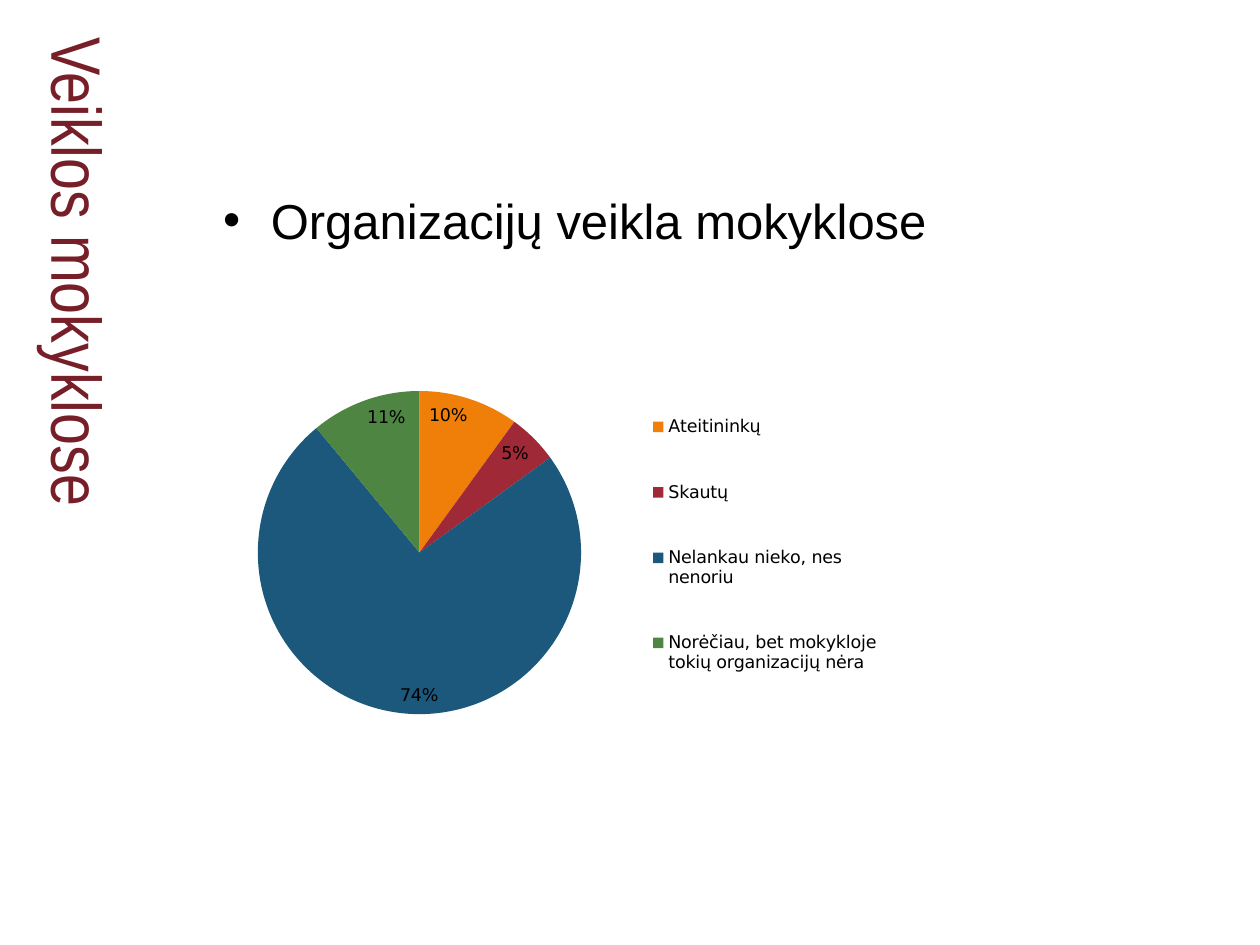
"""Build a slide with a vertical title, one bullet and a pie chart of school activities."""
from dataclasses import dataclass

from lxml.etree import SubElement
from pptx import Presentation
from pptx.chart.data import CategoryChartData
from pptx.dml.color import RGBColor
from pptx.enum.chart import XL_CHART_TYPE as ChartType
from pptx.enum.chart import XL_LABEL_POSITION as LabelPosition
from pptx.enum.chart import XL_LEGEND_POSITION as LegendPosition
from pptx.enum.text import MSO_ANCHOR as Anchor
from pptx.enum.text import MSO_AUTO_SIZE as AutoSize
from pptx.enum.text import PP_ALIGN as Align
from pptx.oxml import parse_xml
from pptx.oxml.ns import nsdecls, qn
from pptx.util import Inches, Pt


@dataclass(frozen=True)
class Theme:
    """Colours, fonts and type sizes of the slide."""
    title_color: str = "771F28"
    text_color: str = "000000"
    slice_colors: tuple = ("F07F09", "9F2936", "1B587C", "4E8542")
    title_font: str = "Arial Narrow"
    body_font: str = "Arial"
    chart_font: str = "DejaVu Sans"
    title_size: int = 40
    body_size: int = 28
    chart_size: int = 10


THEME = Theme()
WIDTH, HEIGHT = Inches(10), Inches(7.5)
ACTIVITIES = {
    "Ateitininkų": 10,
    "Skautų": 5,
    "Nelankau nieko, nes nenoriu": 74,
    "Norėčiau, bet mokykloje tokių organizacijų nėra": 11,
}


def share_box(left, top, width, height):
    """Turn shares of the slide, in percent, into lengths."""
    return (int(WIDTH * left / 100), int(HEIGHT * top / 100),
            int(WIDTH * width / 100), int(HEIGHT * height / 100))


def style_font(font, name, size, color):
    """Set family, size and colour of a font."""
    font.name = name
    font.size = Pt(size)
    font.color.rgb = RGBColor.from_string(color)


def place_text(shape, box, anchor):
    """Move a placeholder to a box and return its first paragraph."""
    shape.left, shape.top, shape.width, shape.height = box
    frame = shape.text_frame
    frame.word_wrap = True
    frame.auto_size = AutoSize.NONE
    frame.vertical_anchor = anchor
    paragraph = frame.paragraphs[0]
    paragraph.alignment = Align.LEFT
    paragraph.space_before = Pt(0)
    return paragraph


def add_title(slide, box, text):
    """Write the title downwards along the left edge."""
    shape = slide.shapes.title
    paragraph = place_text(shape, box, Anchor.MIDDLE)
    shape.text_frame._txBody.bodyPr.set("vert", "eaVert")
    run = paragraph.add_run()
    run.text = text
    style_font(run.font, THEME.title_font, THEME.title_size, THEME.title_color)


def add_bullet(slide, box, text):
    """Write one bulleted line in the body placeholder."""
    paragraph = place_text(slide.placeholders[1], box, Anchor.TOP)
    properties = paragraph._p.get_or_add_pPr()
    properties.set("marL", str(Inches(0.38)))
    properties.set("indent", str(-Inches(0.38)))
    SubElement(properties, qn("a:buFont")).set("typeface", THEME.body_font)
    SubElement(properties, qn("a:buChar")).set("char", "•")
    run = paragraph.add_run()
    run.text = text
    style_font(run.font, THEME.body_font, THEME.body_size, THEME.text_color)


def chart_layout(left, top, width, height, inner=False):
    """Return a manual layout given in shares of the chart."""
    target = '<c:layoutTarget val="inner"/>' if inner else ""
    return parse_xml(
        f'<c:layout {nsdecls("c")}><c:manualLayout>{target}'
        '<c:xMode val="edge"/><c:yMode val="edge"/>'
        f'<c:x val="{left}"/><c:y val="{top}"/>'
        f'<c:w val="{width}"/><c:h val="{height}"/>'
        '</c:manualLayout></c:layout>')


def set_layout(element, layout):
    """Put a layout in a plot area or legend in place of its own."""
    for old in element.findall(qn("c:layout")):
        element.remove(old)
    position = element.find(qn("c:legendPos"))
    element.insert(0 if position is None else 1, layout)


def add_pie(slide, box, activities):
    """Draw the pie with percent labels and a legend at its right."""
    data = CategoryChartData()
    data.categories = list(activities)
    data.add_series("Series 1", list(activities.values()))
    chart = slide.shapes.add_chart(ChartType.PIE, *box, data).chart
    style_font(chart.font, THEME.chart_font, THEME.chart_size, THEME.text_color)
    chart.has_title = False
    chart.has_legend = True
    chart.legend.position = LegendPosition.RIGHT
    chart.legend.include_in_layout = False
    plot = chart.plots[0]
    plot.vary_by_categories = True
    for index, color in enumerate(THEME.slice_colors):
        fill = plot.series[0].points[index].format.fill
        fill.solid()
        fill.fore_color.rgb = RGBColor.from_string(color)
    plot.has_data_labels = True
    labels = plot.data_labels
    labels.show_percentage = True
    labels.show_value = False
    labels.number_format = "0%"
    labels.number_format_is_linked = False
    labels.position = LabelPosition.INSIDE_END
    style_font(labels.font, THEME.chart_font, THEME.chart_size, THEME.text_color)
    plot_area = chart._chartSpace.chart.plotArea
    set_layout(plot_area, chart_layout(0.02, 0.09, 0.44, 0.69, inner=True))
    set_layout(chart.legend._element, chart_layout(0.54, 0.09, 0.34, 0.66))


def main():
    """Build and save the presentation."""
    presentation = Presentation()
    presentation.slide_width, presentation.slide_height = WIDTH, HEIGHT
    slide = presentation.slides.add_slide(presentation.slide_layouts[1])
    add_title(slide, share_box(1.7, 3.3, 9.2, 95.6), "Veiklos mokyklose")
    add_bullet(slide, share_box(16.7, 19.5, 65.8, 76), "Organizacijų veikla mokyklose")
    add_pie(slide, share_box(19.3, 34.3, 58.3, 55.6), ACTIVITIES)
    presentation.save("out.pptx")


if __name__ == "__main__":
    main()
